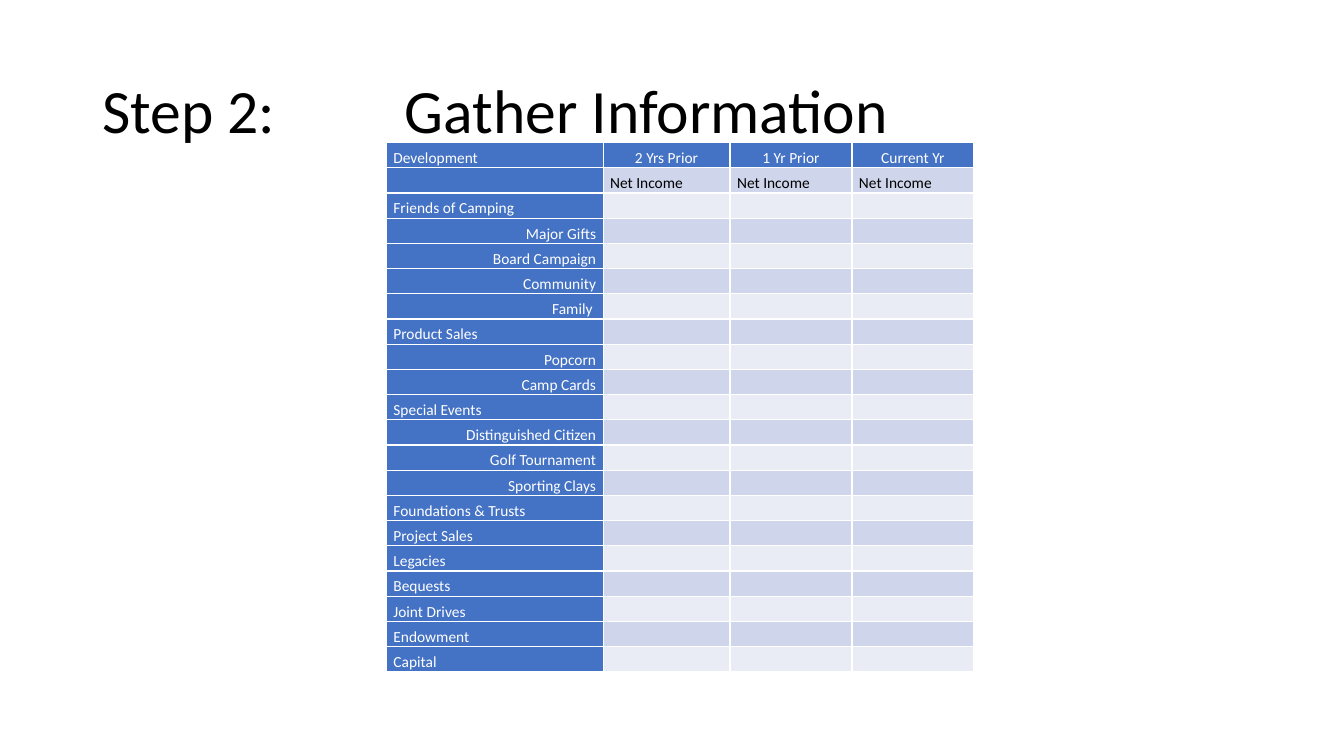
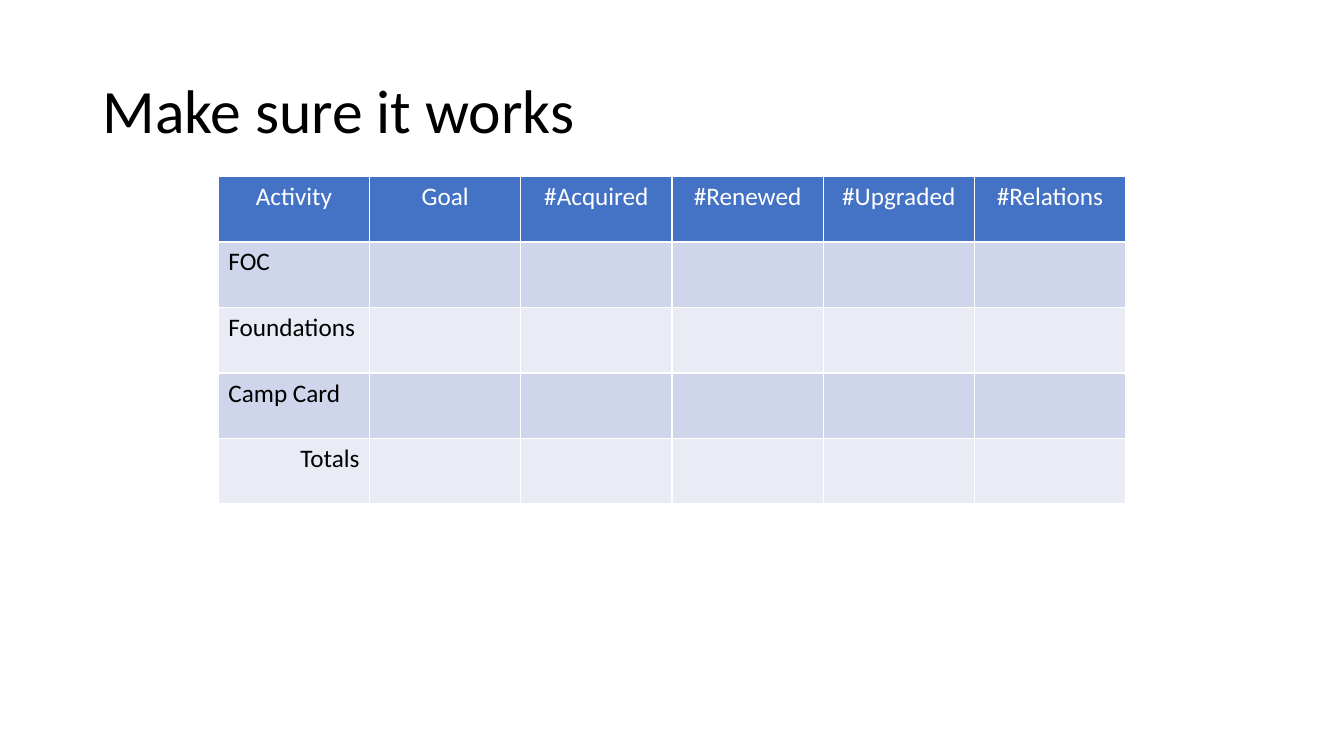
from lxml.etree import SubElement
from pptx import Presentation
from pptx.dml.color import RGBColor
from pptx.enum.text import MSO_ANCHOR, PP_ALIGN
from pptx.oxml.ns import qn
from pptx.util import Pt

FONT = "Calibri"
BLACK = RGBColor(0x00, 0x00, 0x00)
WHITE = RGBColor(0xFF, 0xFF, 0xFF)
BLUE = RGBColor(0x44, 0x72, 0xC4)
BANDS = (RGBColor(0xE9, 0xEB, 0xF5), RGBColor(0xCF, 0xD5, 0xEA))

SLIDE_SIZE = (960, 540)
TITLE_BOX = (66, 28.8, 828, 104.4)
TITLE_TABS = (144, 216)
TITLE_ONLY_LAYOUT = 5
BORDER_WIDTH = 1

INCOME_YEARS = ("2 Yrs Prior", "1 Yr Prior", "Current Yr")
INCOME_SOURCES = (
    ("Friends of Camping", ("Major Gifts", "Board Campaign", "Community", "Family ")),
    ("Product Sales", ("Popcorn", "Camp Cards")),
    ("Special Events", ("Distinguished Citizen", "Golf Tournament", "Sporting Clays")),
    ("Foundations & Trusts", ()),
    ("Project Sales", ()),
    ("Legacies", ()),
    ("Bequests", ()),
    ("Joint Drives", ()),
    ("Endowment", ()),
    ("Capital", ()),
)
GOAL_HEADINGS = ("Activity", "Goal", "#Acquired", "#Renewed", "#Upgraded", "#Relations")
GOAL_ACTIVITIES = ("FOC", "Foundations", "Camp Card")


def write_text(text_frame, text, size=18, color=BLACK, align=PP_ALIGN.LEFT, spacing=1.0):
    paragraph = text_frame.paragraphs[0]
    paragraph.alignment = align
    paragraph.line_spacing = spacing
    if text:
        run = paragraph.add_run()
        run.text = text
        run.font.name = FONT
        run.font.size = Pt(size)
        run.font.bold = False
        run.font.color.rgb = color
    else:
        # An empty cell needs its own text size, or its row grows.
        SubElement(paragraph._p, qn("a:endParaRPr"), sz=str(size * 100))
    return paragraph


def add_title_slide(presentation, title_text):
    slide = presentation.slides.add_slide(presentation.slide_layouts[TITLE_ONLY_LAYOUT])
    title = slide.shapes.title
    title.left, title.top, title.width, title.height = map(Pt, TITLE_BOX)
    title.text_frame.vertical_anchor = MSO_ANCHOR.MIDDLE
    paragraph = write_text(title.text_frame, title_text, size=44, spacing=0.9)
    tab_list = SubElement(paragraph._p.get_or_add_pPr(), qn("a:tabLst"))
    for position in TITLE_TABS:
        SubElement(tab_list, qn("a:tab"), pos=str(Pt(position)), algn="l")
    return slide


def set_borders(cell):
    properties = cell._tc.get_or_add_tcPr()
    for side in "LRTB":
        line = SubElement(properties, qn(f"a:ln{side}"), w=str(Pt(BORDER_WIDTH)))
        fill = SubElement(line, qn("a:solidFill"))
        SubElement(fill, qn("a:srgbClr"), val=str(WHITE))


def add_banded_table(slide, left, top, column_widths, row_height, rows, *, size,
                     spacing=1.0, margins=None, anchor=MSO_ANCHOR.TOP, blue_labels=False):
    """Draw rows of (text, alignment) cells under a blue heading row."""
    table = slide.shapes.add_table(
        len(rows), len(column_widths), Pt(left), Pt(top),
        Pt(sum(column_widths)), Pt(row_height * len(rows))).table
    table.horz_banding = False
    for column, width in zip(table.columns, column_widths):
        column.width = Pt(width)
    for row_index, row in enumerate(rows):
        table.rows[row_index].height = Pt(row_height)
        for column_index, (text, align) in enumerate(row):
            cell = table.cell(row_index, column_index)
            on_blue = row_index == 0 or (blue_labels and column_index == 0)
            set_borders(cell)
            cell.fill.solid()
            cell.fill.fore_color.rgb = BLUE if on_blue else BANDS[row_index % 2]
            cell.vertical_anchor = anchor
            if margins:
                cell.margin_left = cell.margin_right = Pt(margins[0])
                cell.margin_top = cell.margin_bottom = Pt(margins[1])
            write_text(cell.text_frame, text, size=size, align=align, spacing=spacing,
                       color=WHITE if on_blue else BLACK)


def aligned(texts, align=PP_ALIGN.LEFT):
    return [(text, align) for text in texts]


def label_row(label, empty_count, align=PP_ALIGN.LEFT):
    return [(label, align)] + aligned([""] * empty_count)


def add_income_slide(presentation):
    slide = add_title_slide(presentation, "Step 2:\t\tGather Information")
    year_count = len(INCOME_YEARS)
    rows = [
        aligned(["Development"]) + aligned(INCOME_YEARS, PP_ALIGN.CENTER),
        aligned([""] + ["Net Income"] * year_count),
    ]
    for source, parts in INCOME_SOURCES:
        rows.append(label_row(source, year_count))
        rows += [label_row(part, year_count, PP_ALIGN.RIGHT) for part in parts]
    add_banded_table(slide, 276, 101.8, (154.8, 90.7, 87.1, 87.1), 18, rows,
                     size=11, spacing=1.15, margins=(5, 0),
                     anchor=MSO_ANCHOR.BOTTOM, blue_labels=True)


def add_goal_slide(presentation):
    slide = add_title_slide(presentation, "Make sure it works")
    empty_count = len(GOAL_HEADINGS) - 1
    rows = [aligned(GOAL_HEADINGS, PP_ALIGN.CENTER)]
    rows += [label_row(activity, empty_count) for activity in GOAL_ACTIVITIES]
    rows.append(label_row("Totals", empty_count, PP_ALIGN.RIGHT))
    add_banded_table(slide, 156, 126, [108] * len(GOAL_HEADINGS), 46.8, rows, size=18)


def main():
    presentation = Presentation()
    presentation.slide_width, presentation.slide_height = map(Pt, SLIDE_SIZE)
    add_income_slide(presentation)
    add_goal_slide(presentation)
    presentation.save("out.pptx")


if __name__ == "__main__":
    main()
